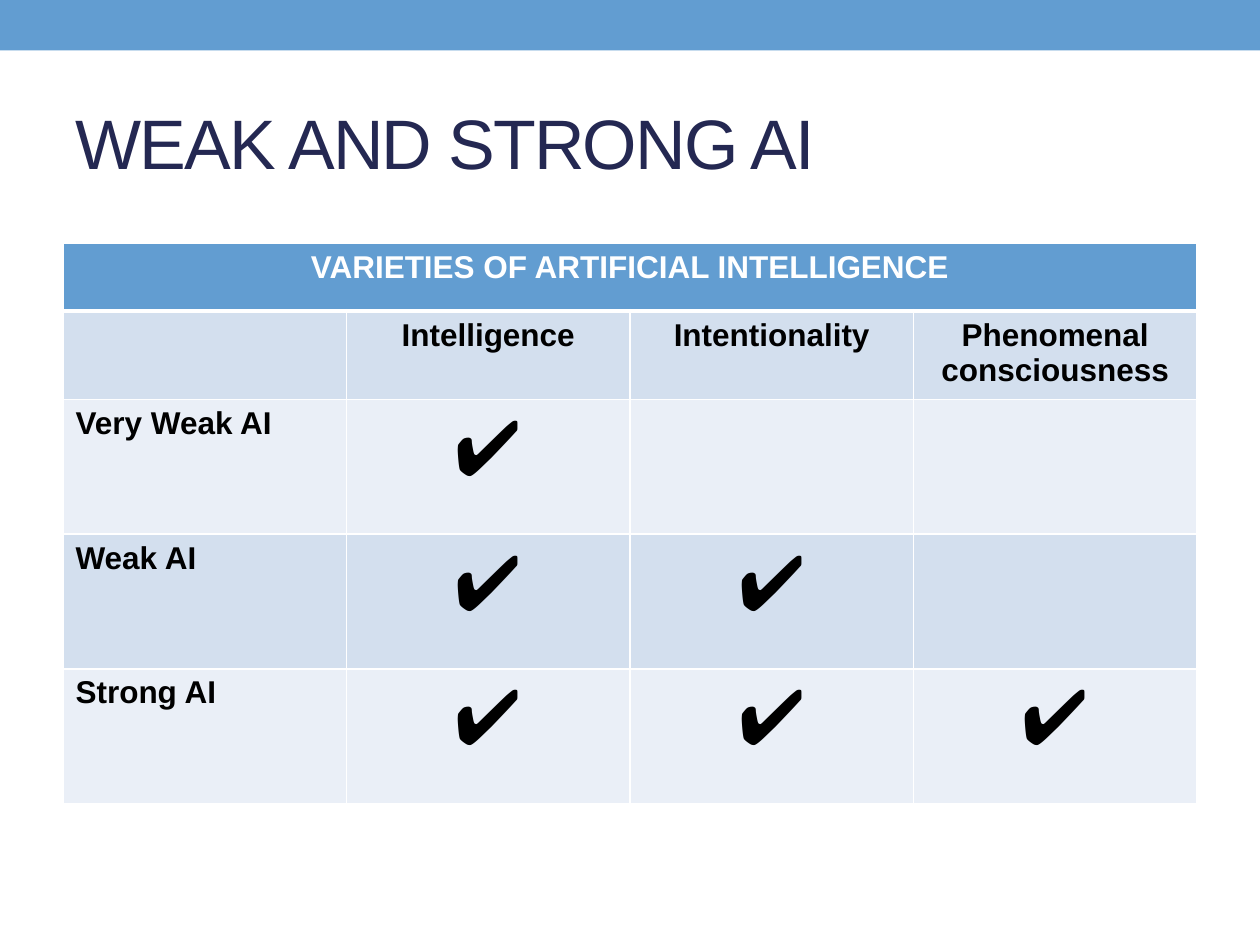
from pptx import Presentation
from pptx.dml.color import RGBColor
from pptx.enum.shapes import MSO_SHAPE
from pptx.enum.text import MSO_ANCHOR, PP_ALIGN
from pptx.oxml.ns import qn
from pptx.util import Inches, Pt
from lxml.etree import SubElement

COLORS = {
    "accent": "629DD1",
    "title": "242852",
    "text": "000000",
    "white": "FFFFFF",
    "band_dark": "D3DFEE",
    "band_light": "EAEFF7",
}
CHECK = "✔"
HEADING = "VARIETIES OF ARTIFICIAL INTELLIGENCE"
ROWS = [
    [HEADING, "", "", ""],
    ["", "Intelligence", "Intentionality", "Phenomenal consciousness"],
    ["Very Weak AI", CHECK, "", ""],
    ["Weak AI", CHECK, CHECK, ""],
    ["Strong AI", CHECK, CHECK, CHECK],
]
ROW_HEIGHTS = [0.54, 0.63, 1.07, 1.07, 1.07]


class SlideBuilder:
    def __init__(self, slide, font="Arial"):
        self.slide = slide
        self.font = font

    def color(self, name):
        return RGBColor.from_string(COLORS[name])

    def add_text(self, paragraph, text, size, color, bold=False):
        run = paragraph.add_run()
        run.text = text
        run.font.name = self.font
        run.font.size = Pt(size)
        run.font.bold = bold
        run.font.color.rgb = self.color(color)
        return run

    def band(self, left, top, width, height, color):
        band = self.slide.shapes.add_shape(
            MSO_SHAPE.RECTANGLE, Inches(left), Inches(top), Inches(width), Inches(height))
        band.shadow.inherit = False
        band.fill.solid()
        band.fill.fore_color.rgb = self.color(color)
        band.line.fill.background()

    def title(self, text, left, top, width, height):
        frame = self.slide.shapes.add_textbox(
            Inches(left), Inches(top), Inches(width), Inches(height)).text_frame
        frame.word_wrap = True
        frame.vertical_anchor = MSO_ANCHOR.MIDDLE
        run = self.add_text(frame.paragraphs[0], text, 40, "title")
        run.font._element.set("spc", "-100")

    def borders(self, cell, top=1, bottom=1):
        """Draw white borders; call before filling, as the schema puts lines first."""
        properties = cell._tc.get_or_add_tcPr()
        for side, width in (("L", 1), ("R", 1), ("T", top), ("B", bottom)):
            line = SubElement(properties, qn(f"a:ln{side}"), w=str(Pt(width)))
            fill = SubElement(line, qn("a:solidFill"))
            SubElement(fill, qn("a:srgbClr"), val=COLORS["white"])

    def table(self, rows, heights, left, top, width):
        """Draw a banded table whose first row is one merged heading."""
        table = self.slide.shapes.add_table(
            len(rows), len(rows[0]), Inches(left), Inches(top),
            Inches(width), Inches(sum(heights))).table
        for row, height in zip(table.rows, heights):
            row.height = Inches(height)
        table.cell(0, 0).merge(table.cell(0, len(rows[0]) - 1))
        for r, row in enumerate(rows):
            band = "accent" if r == 0 else "band_dark" if r % 2 else "band_light"
            for c, text in enumerate(row):
                cell = table.cell(r, c)
                self.borders(cell, top=3 if r == 1 else 1, bottom=3 if r == 0 else 1)
                cell.fill.solid()
                cell.fill.fore_color.rgb = self.color(band)
                if not text:
                    continue
                paragraph = cell.text_frame.paragraphs[0]
                if r < 2 or c > 0:
                    paragraph.alignment = PP_ALIGN.CENTER
                is_check = text == CHECK
                self.add_text(paragraph, text, 44 if is_check else 18,
                              "white" if r == 0 else "text", bold=not is_check)


def main():
    presentation = Presentation()
    presentation.slide_width = Inches(10)
    presentation.slide_height = Inches(7.5)
    builder = SlideBuilder(presentation.slides.add_slide(presentation.slide_layouts[6]))
    builder.band(0, 0, 10, 0.4, "accent")
    builder.title("WEAK AND STRONG AI", 0.5, 0.58, 9, 1.08)
    builder.table(ROWS, ROW_HEIGHTS, 0.5, 1.93, 9)
    presentation.save("out.pptx")


if __name__ == "__main__":
    main()
